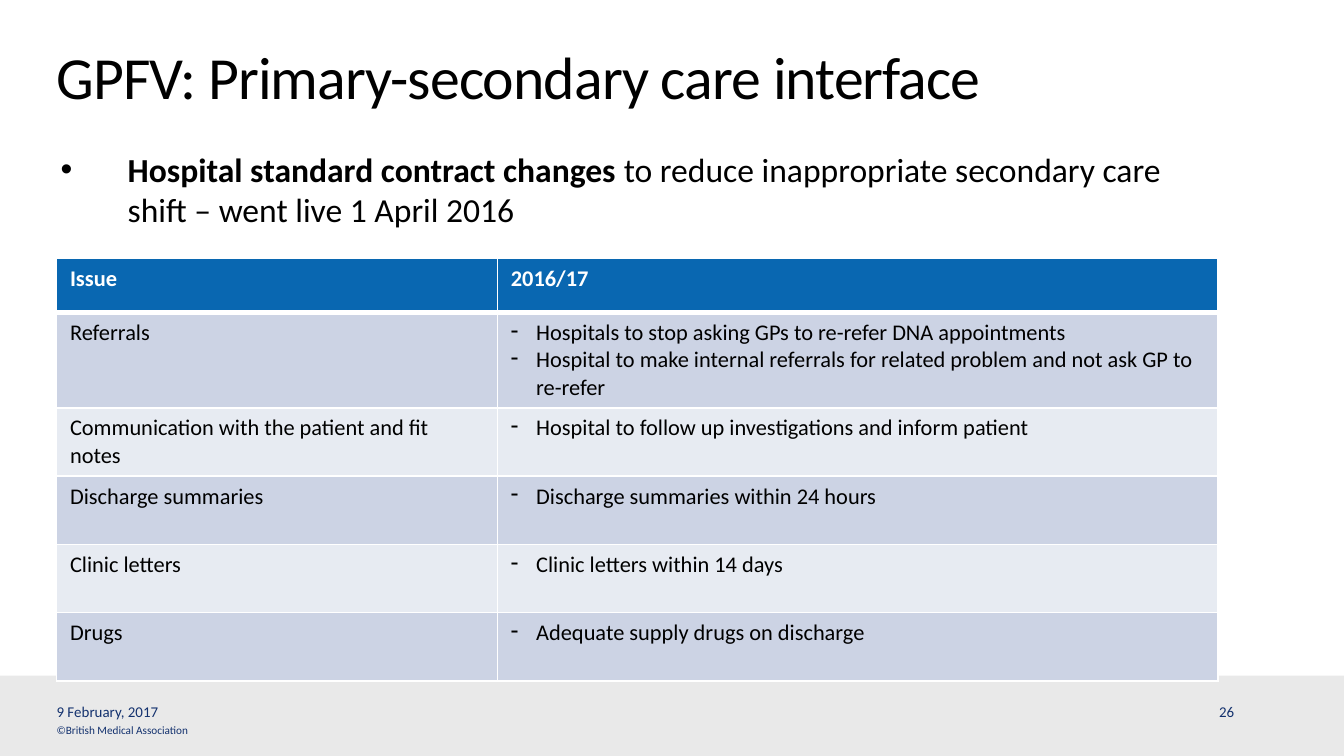
from lxml.etree import SubElement
from pptx import Presentation
from pptx.dml.color import RGBColor
from pptx.enum.shapes import MSO_SHAPE
from pptx.enum.text import MSO_ANCHOR, MSO_AUTO_SIZE, PP_ALIGN
from pptx.oxml import parse_xml
from pptx.oxml.ns import nsdecls, qn
from pptx.util import Cm, Pt

COLOURS = {
    "text": "000000",
    "white": "FFFFFF",
    "footer": "13316E",
    "footer band": "E9E9E9",
    "header": "0967B1",
    "odd row": "CCD3E4",
    "even row": "E7EBF2",
}
HEADING = "GPFV: Primary-secondary care interface"
SUMMARY = [
    ("Hospital standard contract changes ", True),
    ("to reduce inappropriate secondary care shift – went live 1 April 2016", False),
]
COLUMN_HEADS = ("Issue", "2016/17")
ISSUES = [
    ("Referrals", [
        "Hospitals to stop asking GPs to re-refer DNA appointments",
        "Hospital to make internal referrals for related problem and not ask GP to re-refer",
    ]),
    ("Communication with the patient and fit notes",
     ["Hospital to follow up investigations and inform patient"]),
    ("Discharge summaries", ["Discharge summaries within 24 hours"]),
    ("Clinic letters", ["Clinic letters within 14 days"]),
    ("Drugs", ["Adequate supply drugs on discharge"]),
]
FOOTERS = [
    ("9 February, 2017", 8, (1.07, 13.28, 8.05, 0.33)),
    ("26", 8, (23.04, 13.28, 0.71, 0.33)),
    ("©British Medical Association", 6, (1.07, 13.67, 5.26, 0.25)),
]
COLUMN_WIDTHS = (8.33, 13.62)
ROW_HEIGHTS = (1.03, 1.8) + (1.29,) * 4
NO_INSETS = dict.fromkeys(("margin_left", "margin_top", "margin_right", "margin_bottom"), 0)


def apply(target, values):
    for name, value in values.items():
        setattr(target, name, value)


def place(part, box):
    apply(part, dict(zip(("left", "top", "width", "height"), map(Cm, box))))


def rgb(colour):
    return RGBColor.from_string(COLOURS[colour])


def write(paragraph, text, size, colour="text", bold=False):
    run = paragraph.add_run()
    apply(run, {"text": text})
    apply(run.font, {"name": "Calibri", "size": Pt(size), "bold": bold})
    run.font.color.rgb = rgb(colour)
    return run


def add_bullet(paragraph, mark, indent):
    properties = paragraph._p.get_or_add_pPr()
    properties.set("marL", str(Cm(indent)))
    properties.set("indent", str(-Cm(indent)))
    SubElement(properties, qn("a:buChar"), char=mark)


def style_cell(cell, fill, bottom_width):
    cell.fill.solid()
    cell.fill.fore_color.rgb = rgb(fill)
    properties = cell._tc.get_or_add_tcPr()
    for position, (side, width) in enumerate(
            (("L", 1), ("R", 1), ("T", 1), ("B", bottom_width))):
        properties.insert(position, parse_xml(
            f'<a:ln{side} {nsdecls("a")} w="{Pt(width)}"><a:solidFill>'
            f'<a:srgbClr val="{COLOURS["white"]}"/></a:solidFill></a:ln{side}>'))


def add_issue_table(slide):
    table = slide.shapes.add_table(
        len(ROW_HEIGHTS), len(COLUMN_WIDTHS), Cm(1.07), Cm(4.88),
        Cm(sum(COLUMN_WIDTHS)), Cm(sum(ROW_HEIGHTS))).table
    apply(table, {"first_row": False, "horz_banding": False})
    for column, width in zip(table.columns, COLUMN_WIDTHS):
        column.width = Cm(width)
    for row, height in zip(table.rows, ROW_HEIGHTS):
        row.height = Cm(height)
    for cell, head in zip(table.rows[0].cells, COLUMN_HEADS):
        style_cell(cell, "header", 3)
        write(cell.text_frame.paragraphs[0], head, 12, "white", True)
    for number, (issue, changes) in enumerate(ISSUES, 1):
        issue_cell, changes_cell = table.rows[number].cells
        for cell in (issue_cell, changes_cell):
            style_cell(cell, "odd row" if number % 2 else "even row", 1)
        write(issue_cell.text_frame.paragraphs[0], issue, 12)
        frame = changes_cell.text_frame
        for index, change in enumerate(changes):
            paragraph = frame.add_paragraph() if index else frame.paragraphs[0]
            add_bullet(paragraph, "-", 0.48)
            write(paragraph, change, 12)


def main():
    deck = Presentation()
    apply(deck, {"slide_width": Cm(25.4), "slide_height": Cm(14.29)})
    slide = deck.slides.add_slide(deck.slide_layouts[1])
    title, summary = slide.placeholders

    place(title, (1.07, 0.91, 19.63, 1.37))
    apply(title.text_frame, {**NO_INSETS, "vertical_anchor": MSO_ANCHOR.TOP,
                             "auto_size": MSO_AUTO_SIZE.NONE})
    heading = title.text_frame.paragraphs[0]
    apply(heading, {"alignment": PP_ALIGN.LEFT, "line_spacing": Pt(34)})
    write(heading, HEADING, 32)._r.get_or_add_rPr().set("spc", "-50")

    place(summary, (0.89, 2.69, 22.15, 1.8))
    summary.text_frame.auto_size = MSO_AUTO_SIZE.NONE
    sentence = summary.text_frame.paragraphs[0]
    add_bullet(sentence, "•", 1.27)
    sentence.space_before = Pt(0)
    for text, bold in SUMMARY:
        write(sentence, text, 18, bold=bold)

    band = slide.shapes.add_shape(MSO_SHAPE.RECTANGLE, 0, Cm(12.77), Cm(25.4), Cm(1.52))
    band.shadow.inherit = False
    band.fill.solid()
    band.fill.fore_color.rgb = rgb("footer band")
    band.line.fill.background()

    for text, size, box in FOOTERS:
        footer = slide.shapes.add_textbox(*map(Cm, box))
        apply(footer.text_frame, {**NO_INSETS, "word_wrap": True,
                                  "vertical_anchor": MSO_ANCHOR.MIDDLE})
        write(footer.text_frame.paragraphs[0], text, size, "footer")

    add_issue_table(slide)
    deck.save("out.pptx")


if __name__ == "__main__":
    main()
